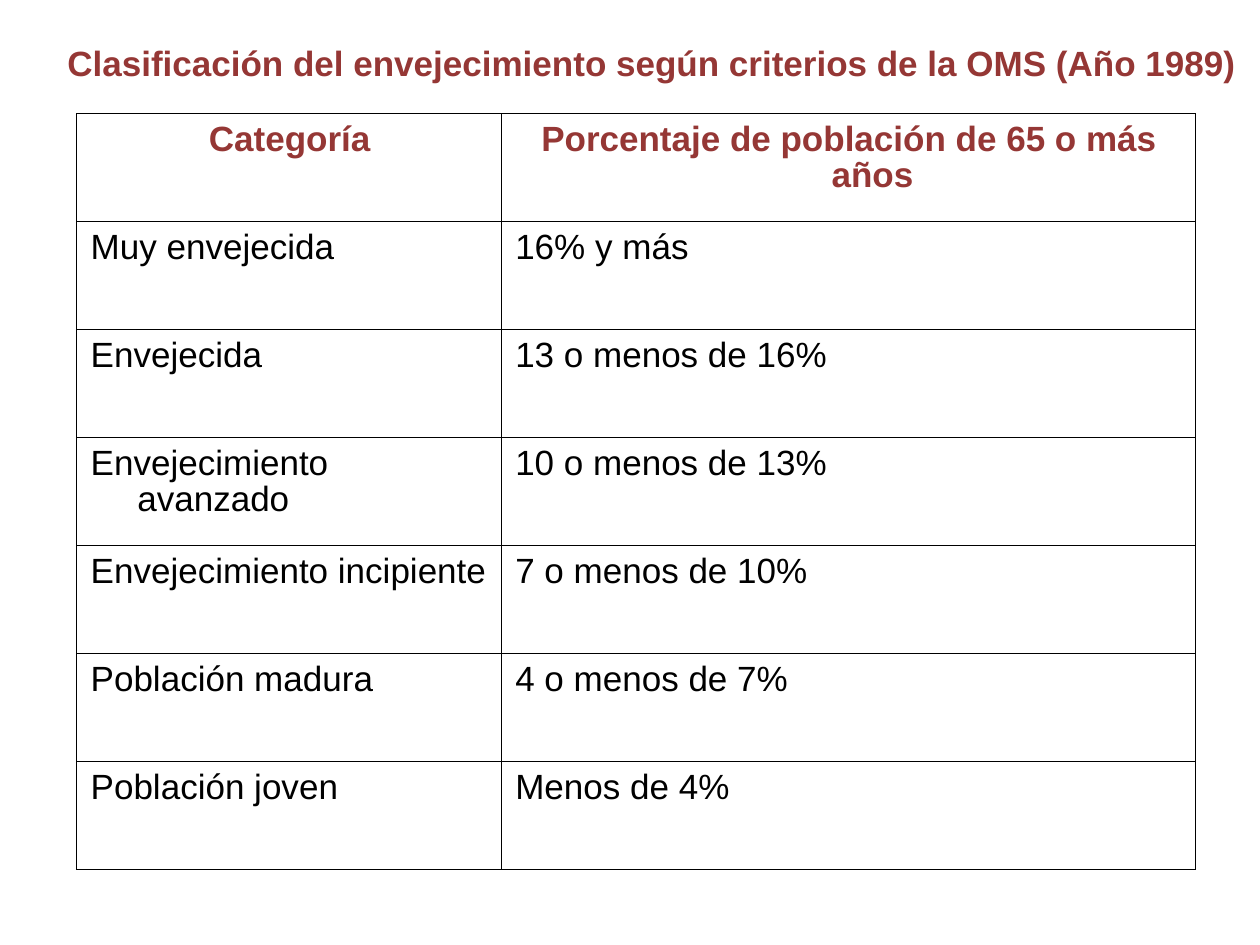
from lxml.etree import SubElement
from pptx import Presentation
from pptx.dml.color import RGBColor
from pptx.enum.text import MSO_ANCHOR, MSO_AUTO_SIZE, PP_ALIGN
from pptx.oxml.ns import qn
from pptx.util import Inches, Pt

MAROON = RGBColor(0x95, 0x37, 0x35)
BLACK = RGBColor(0, 0, 0)

TITLE = "Clasificación del envejecimiento según criterios de la OMS (Año 1989)"
HEADINGS = ("Categoría", "Porcentaje de población de 65 o más años")
CATEGORIES = (
    ("Muy envejecida", "16% y más"),
    ("Envejecida", "13 o menos de 16%"),
    ("Envejecimiento avanzado", "10 o menos de 13%"),
    ("Envejecimiento incipiente", "7 o menos de 10%"),
    ("Población madura", "4 o menos de 7%"),
    ("Población joven", "Menos de 4%"),
)
COLUMN_WIDTHS = (3.37, 5.51)
TABLE_HEIGHT = 6


def add_text(paragraph, text, color, bold, align):
    """Add one formatted run to an aligned paragraph."""
    paragraph.alignment = align
    run = paragraph.add_run()
    run.text = text
    run.font.name = "Arial"
    run.font.size = Pt(20)
    run.font.bold = bold
    run.font.color.rgb = color


def set_title(slide):
    """Place and format the title placeholder."""
    title = slide.shapes.title
    title.left, title.top = Inches(0.35), Inches(0.28)
    title.width, title.height = Inches(9.65), Inches(0.44)
    frame = title.text_frame
    frame.word_wrap = True
    frame.auto_size = MSO_AUTO_SIZE.SHAPE_TO_FIT_TEXT
    frame.vertical_anchor = MSO_ANCHOR.TOP
    frame.margin_left = frame.margin_right = Inches(0.1)
    frame.margin_top = frame.margin_bottom = Inches(0.05)
    heading = frame.paragraphs[0]
    heading.space_before = Pt(12.5)
    add_text(heading, TITLE, MAROON, True, PP_ALIGN.CENTER)


def set_borders(cell):
    """Draw a thin black line on every side of a cell."""
    properties = cell._tc.get_or_add_tcPr()
    for position, side in enumerate(("a:lnL", "a:lnR", "a:lnT", "a:lnB")):
        border = SubElement(properties, qn(side), w=str(Pt(0.45)))
        fill = SubElement(border, qn("a:solidFill"))
        SubElement(fill, qn("a:srgbClr"), val=str(BLACK))
        properties.insert(position, border)


def fill_cell(cell, text, color, bold, align):
    """Format a cell and write its text with a hanging indent."""
    cell.fill.background()
    set_borders(cell)
    cell.vertical_anchor = MSO_ANCHOR.TOP
    cell.margin_left = cell.margin_right = Inches(0.1)
    cell.margin_top, cell.margin_bottom = Inches(0.07), Inches(0.05)
    paragraph = cell.text_frame.paragraphs[0]
    paragraph.line_spacing = 0.93
    indents = paragraph._p.get_or_add_pPr()
    indents.set("marL", str(Inches(0.38)))
    indents.set("indent", str(Inches(-0.37)))
    add_text(paragraph, text, color, bold, align)


def add_category_table(slide):
    """Add the table of ageing categories."""
    rows = (HEADINGS, *CATEGORIES)
    table = slide.shapes.add_table(
        len(rows), len(HEADINGS), Inches(0.61), Inches(0.9),
        Inches(sum(COLUMN_WIDTHS)), Inches(TABLE_HEIGHT),
    ).table
    table.first_row = table.horz_banding = False
    for column, width in zip(table.columns, COLUMN_WIDTHS):
        column.width = Inches(width)
    for row_index, texts in enumerate(rows):
        is_heading = row_index == 0
        color = MAROON if is_heading else BLACK
        aligns = (PP_ALIGN.JUSTIFY, PP_ALIGN.LEFT)
        if is_heading:
            aligns = (PP_ALIGN.CENTER, PP_ALIGN.CENTER)
        for column_index, (text, align) in enumerate(zip(texts, aligns)):
            cell = table.cell(row_index, column_index)
            fill_cell(cell, text, color, is_heading, align)


def main():
    """Build and save the slide."""
    presentation = Presentation()
    presentation.slide_width = Inches(10)
    presentation.slide_height = Inches(7.5)
    slide = presentation.slides.add_slide(presentation.slide_layouts[5])
    add_category_table(slide)
    set_title(slide)
    presentation.save("out.pptx")


main()
